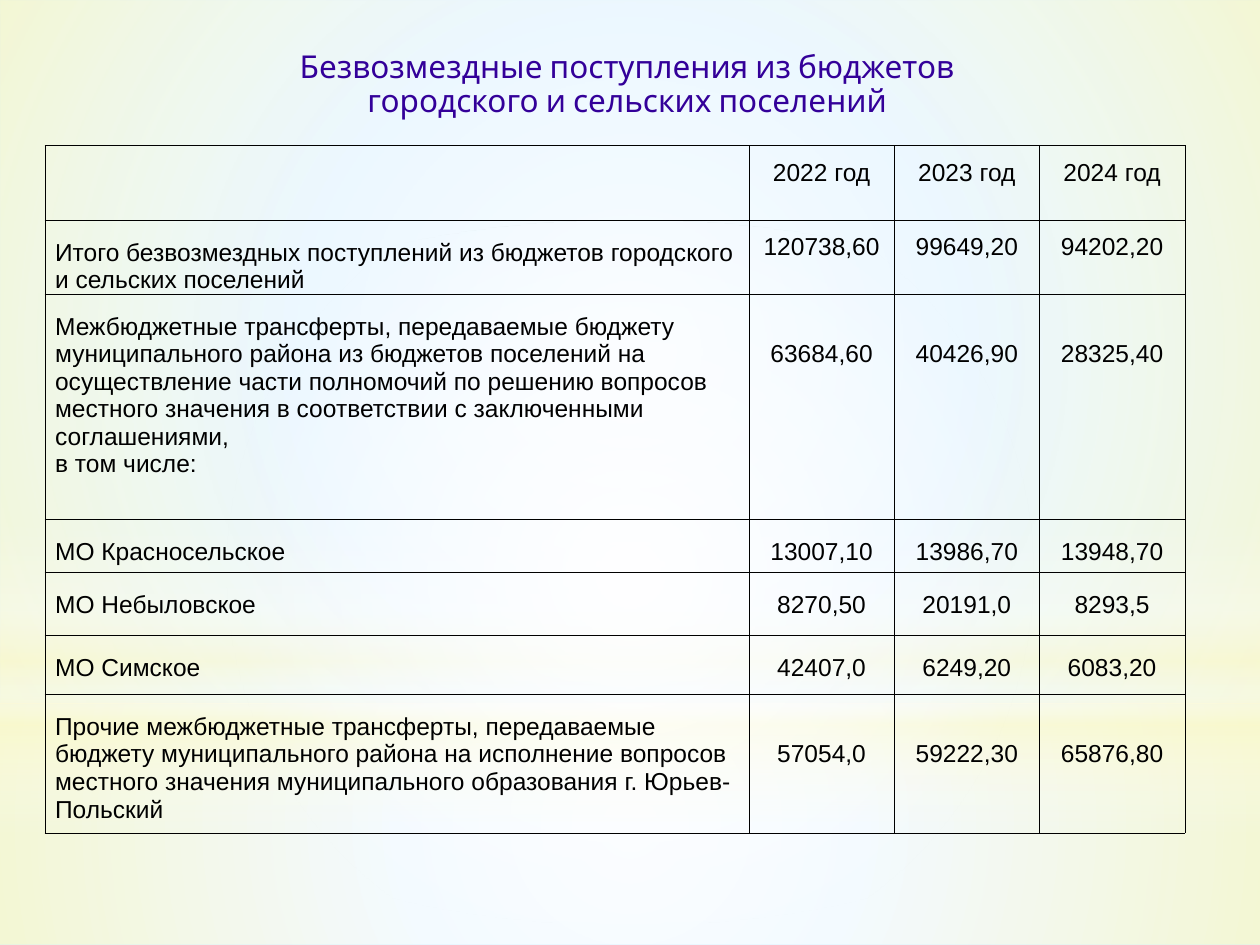
from pptx import Presentation
from pptx.dml.color import RGBColor
from pptx.enum.shapes import MSO_SHAPE
from pptx.enum.text import MSO_ANCHOR, PP_ALIGN
from pptx.oxml import parse_xml
from pptx.oxml.ns import nsdecls
from pptx.util import Pt

TITLE = ["Безвозмездные поступления из бюджетов", "городского и сельских поселений"]
ROWS = [
    (42.5, [""], ["2022 год", "2023 год", "2024 год"]),
    (42.5, ["Итого безвозмездных поступлений из бюджетов городского и сельских поселений"],
     ["120738,60", "99649,20", "94202,20"]),
    (128.8, ["Межбюджетные трансферты, передаваемые бюджету муниципального района "
             "из бюджетов поселений на осуществление части полномочий по решению вопросов "
             "местного значения в соответствии с заключенными соглашениями,",
             "в том числе:"],
     ["63684,60", "40426,90", "28325,40"]),
    (30.2, ["МО Красносельское"], ["13007,10", "13986,70", "13948,70"]),
    (36, ["МО Небыловское"], ["8270,50", "20191,0", "8293,5"]),
    (33.8, ["МО Симское"], ["42407,0", "6249,20", "6083,20"]),
    (79.2, ["Прочие межбюджетные трансферты, передаваемые бюджету муниципального района "
            "на исполнение вопросов местного значения муниципального образования г. Юрьев-Польский"],
     ["57054,0", "59222,30", "65876,80"]),
]
WIDTHS = [402.5, 83, 83, 83]
TALL = 70
LINE = 15.7
WHITE, CREAM = "FFFFFF", "FEFAC9"
ROUND = ('<a:path path="circle"><a:fillToRect l="50000" t="50000" '
         'r="50000" b="50000"/></a:path>')
DOWN = '<a:lin ang="5400000" scaled="0"/>'
GLOWS = [
    (MSO_SHAPE.RECTANGLE, 402, 138, ROUND,
     [(0, WHITE, 91), (37, WHITE, 76), (100, CREAM, 79)]),
    (MSO_SHAPE.RECTANGLE, 0, 402, ROUND,
     [(0, WHITE, 89), (48, WHITE, 62), (100, CREAM, 79)]),
    (MSO_SHAPE.RECTANGLE, 297, 180, DOWN,
     [(0, WHITE, 0), (29, WHITE, 30), (45, CREAM, 40),
      (55, WHITE, 26), (65, CREAM, 60), (100, WHITE, 0)]),
    (MSO_SHAPE.OVAL, 126, 402, ROUND, [(0, WHITE, 100), (56, WHITE, 0)]),
]


def color(code):
    return RGBColor.from_string(code)


def write(frame, lines, font, size, code, align):
    frame.word_wrap = True
    frame.text = "\n".join(lines)
    for para in frame.paragraphs:
        para.alignment = align
        para.font.name = font
        para.font.size = Pt(size)
        para.font.color.rgb = color(code)


def add_glow(slide, kind, top, height, path_xml, stops):
    shape = slide.shapes.add_shape(kind, 0, Pt(top), Pt(720), Pt(height))
    shape.shadow.inherit = False
    shape.line.fill.background()
    marks = "".join(
        f'<a:gs pos="{pos * 1000}"><a:srgbClr val="{code}">'
        f'<a:alpha val="{alpha * 1000}"/></a:srgbClr></a:gs>'
        for pos, code, alpha in stops)
    shape.element.spPr.insert(2, parse_xml(
        f'<a:gradFill {nsdecls("a")} rotWithShape="1">'
        f'<a:gsLst>{marks}</a:gsLst>{path_xml}</a:gradFill>'))


def add_edges(cell):
    props = cell._tc.get_or_add_tcPr()
    for spot, side in enumerate("LRTB"):
        props.insert(spot, parse_xml(
            f'<a:ln{side} {nsdecls("a")} w="{Pt(0.06)}"><a:solidFill>'
            f'<a:srgbClr val="000000"/></a:solidFill></a:ln{side}>'))


def fill_cell(cell, lines, align, top):
    cell.margin_left = cell.margin_right = Pt(6)
    cell.margin_top, cell.margin_bottom = Pt(top), 0
    write(cell.text_frame, lines, "Arial", 14, "000000", align)
    cell.fill.background()
    add_edges(cell)


def add_grid(slide):
    heights = [row[0] for row in ROWS]
    frame = slide.shapes.add_table(len(ROWS), len(WIDTHS), Pt(25.5), Pt(83),
                                   Pt(sum(WIDTHS)), Pt(sum(heights)))
    table = frame.table
    table.first_row = table.horz_banding = False
    for col, width in zip(table.columns, WIDTHS):
        col.width = Pt(width)
    for num, (height, label, values) in enumerate(ROWS):
        table.rows[num].height = Pt(height)
        top = 8 if num < 2 else 10.8
        fill_cell(table.cell(num, 0), label, PP_ALIGN.LEFT, top)
        drop = LINE if height > TALL else 0
        for col, value in enumerate(values, 1):
            fill_cell(table.cell(num, col), [value], PP_ALIGN.CENTER, top + drop)
    table.cell(1, 0).vertical_anchor = MSO_ANCHOR.BOTTOM


def main():
    deck = Presentation()
    deck.slide_width, deck.slide_height = Pt(720), Pt(540)
    slide = deck.slides.add_slide(deck.slide_layouts[6])
    back = slide.background.fill
    back.solid()
    back.fore_color.rgb = color("CCECFF")
    for glow in GLOWS:
        add_glow(slide, *glow)
    title = slide.shapes.add_textbox(Pt(-3), Pt(26), Pt(723), Pt(51)).text_frame
    write(title, TITLE, "Cabin", 18, "330099", PP_ALIGN.CENTER)
    for para in title.paragraphs:
        para.line_spacing = 0.9
    add_grid(slide)
    deck.save("out.pptx")


if __name__ == "__main__":
    main()
